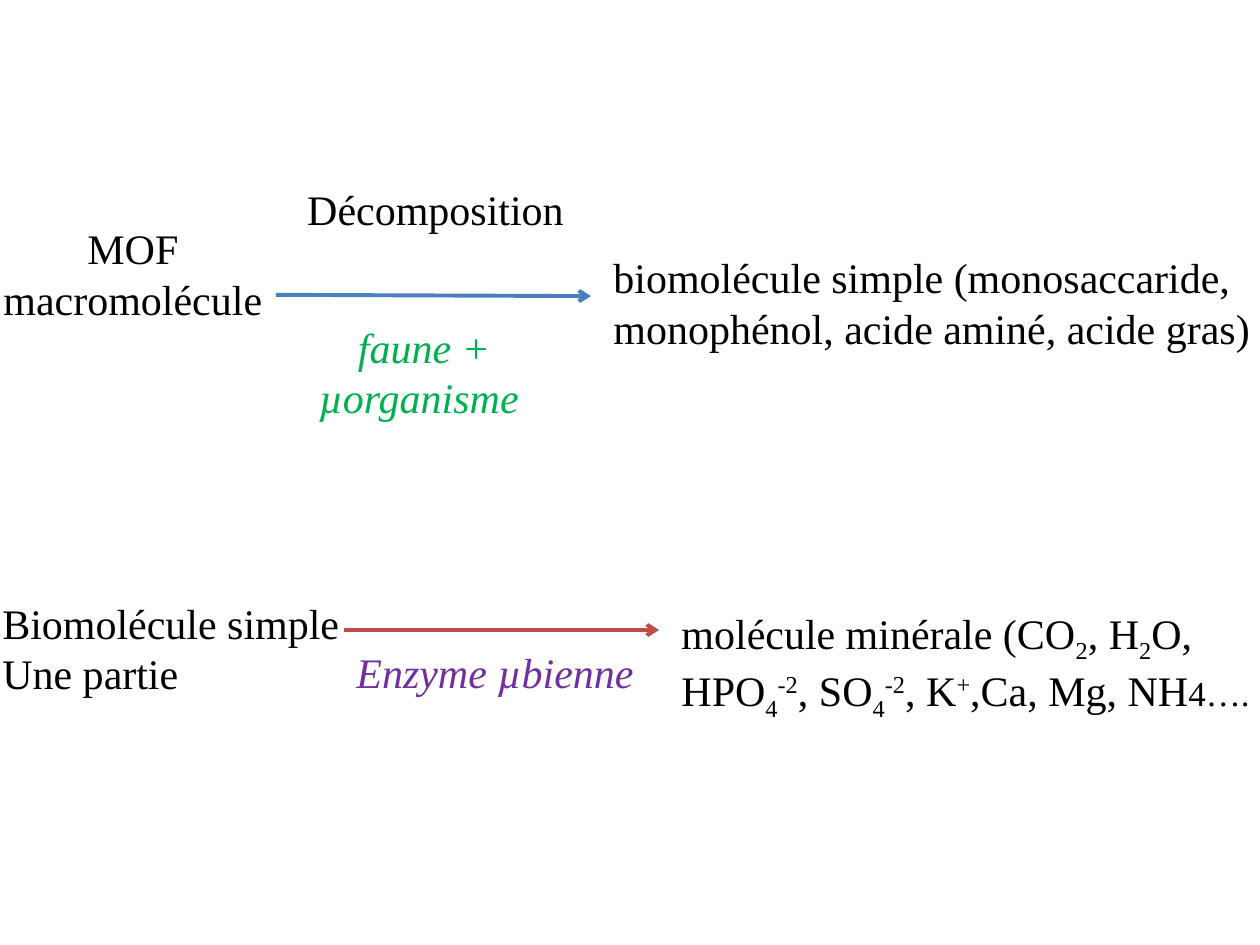
"""Builds a slide on the decomposition of organic matter into mineral molecules."""
from lxml import etree
from pptx import Presentation
from pptx.dml.color import RGBColor
from pptx.enum.shapes import MSO_CONNECTOR
from pptx.enum.text import MSO_AUTO_SIZE, PP_ALIGN
from pptx.oxml.ns import qn
from pptx.util import Inches, Pt

STRAIGHT = MSO_CONNECTOR.STRAIGHT
GROW = MSO_AUTO_SIZE.SHAPE_TO_FIT_TEXT
LEFT, CENTER = PP_ALIGN.LEFT, PP_ALIGN.CENTER

WIDTH, HEIGHT = 10, 7.5
COLUMNS, ROWS = 100, 75
FONT = "Times New Roman"
BODY_SIZE, SMALL_SIZE = 24, 20
COLORS = {
    "text": "000000",
    "fauna": "00B050",
    "enzyme": "7030A0",
    "decomposition": "4B7EBC",
    "mineralisation": "BF4C48",
}
SUB, SUP, SMALL = {"baseline": -25}, {"baseline": 30}, {"size": SMALL_SIZE}
ONE_LINE, TWO_LINES = 5, 9.1
ARROW_LENGTH = 25

MINERALS = [
    ["molécule minérale (CO", ("2", SUB), ", H", ("2", SUB), "O,"],
    ["HPO", ("4", SUB), ("-2", SUP), ", SO", ("4", SUB), ("-2", SUP),
     ", K", ("+", SUP), ",Ca, Mg, NH", ("4….", SMALL)],
]
LABELS = [
    ((-0.8, 17.2, 22.7, TWO_LINES), [["MOF"], ["macromolécule"]], {"align": CENTER}),
    ((23.4, 14.1, 22.6, ONE_LINE), [["Décomposition"]], {}),
    ((47.7, 19.5, 54.7, TWO_LINES),
     [["biomolécule simple (monosaccaride, monophénol, acide aminé, acide gras)"]],
     {"wrap": True}),
    ((24.2, 25, 18.9, TWO_LINES), [["faune +"], ["µorganisme "]],
     {"align": CENTER, "color": "fauna", "italic": True}),
    ((-0.8, 46.9, 29, TWO_LINES), [["Biomolécule simple"], ["Une partie"]], {}),
    ((27.3, 50.8, 24.2, ONE_LINE), [["Enzyme µbienne"]],
     {"color": "enzyme", "italic": True}),
    ((53.1, 47.7, 48.5, TWO_LINES), MINERALS, {}),
]
ARROWS = [
    (21.9, 23.4, 23.5, "decomposition"),
    (27.3, 50, 50, "mineralisation"),
]


def across(columns):
    return Inches(columns * WIDTH / COLUMNS)


def down(rows):
    return Inches(rows * HEIGHT / ROWS)


def add_text(page, place, lines, align=LEFT, color="text", italic=False, wrap=False):
    left, top, width, height = place
    box = page.shapes.add_textbox(across(left), down(top), across(width), down(height))
    frame = box.text_frame
    frame.word_wrap = wrap
    frame.auto_size = GROW
    for index, line in enumerate(lines):
        para = frame.add_paragraph() if index else frame.paragraphs[0]
        para.alignment = align
        for part in line:
            words, style = (part, {}) if isinstance(part, str) else part
            span = para.add_run()
            span.text = words
            span.font.name = FONT
            span.font.size = Pt(style.get("size", BODY_SIZE))
            span.font.italic = italic
            span.font.color.rgb = RGBColor.from_string(COLORS[color])
            if "baseline" in style:
                span.font._element.set("baseline", str(style["baseline"] * 1000))


def add_arrow(page, left, start, end, color):
    arrow = page.shapes.add_connector(
        STRAIGHT, across(left), down(start), across(left + ARROW_LENGTH), down(end))
    arrow.line.color.rgb = RGBColor.from_string(COLORS[color])
    arrow.line.width = Pt(2.25)
    etree.SubElement(arrow.line._get_or_add_ln(), qn("a:tailEnd"), type="arrow")
    etree.SubElement(arrow._element.spPr, qn("a:effectLst"))


def main():
    deck = Presentation()
    deck.slide_width, deck.slide_height = Inches(WIDTH), Inches(HEIGHT)
    page = deck.slides.add_slide(deck.slide_layouts[6])
    for place, lines, style in LABELS:
        add_text(page, place, lines, **style)
    for arrow in ARROWS:
        add_arrow(page, *arrow)
    deck.save("out.pptx")


if __name__ == "__main__":
    main()
